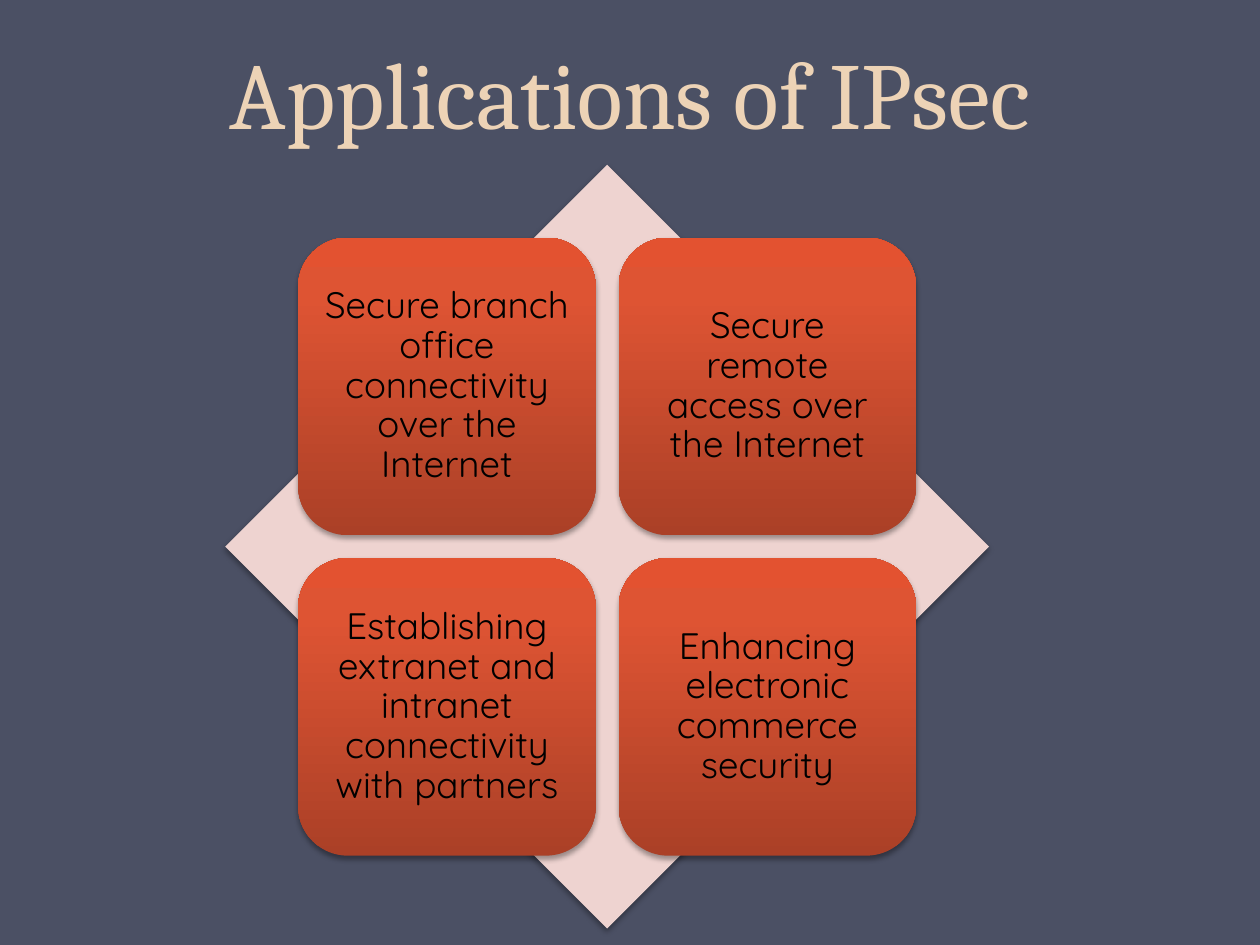
from dataclasses import dataclass

from lxml.etree import SubElement
from pptx import Presentation
from pptx.dml.color import RGBColor
from pptx.enum.shapes import MSO_SHAPE
from pptx.enum.text import MSO_ANCHOR, MSO_AUTO_SIZE, PP_ALIGN
from pptx.oxml.ns import qn
from pptx.util import Cm, Pt


@dataclass(frozen=True)
class Theme:
    background: str = "4B5064"
    title: str = "EDD3B6"
    diamond: str = "EED3D0"
    text: str = "000000"
    shadow: str = "000000"
    card_gradient: tuple = ((0, "AB4027"), (80, "DE5433"), (100, "E35230"))
    title_font: str = "Cambria"
    card_font: str = "Quicksand"
    title_size: int = 54
    card_size: int = 21


theme = Theme()


def style_paragraph(paragraph, font_name, size, color, spacing):
    paragraph.alignment = PP_ALIGN.CENTER
    paragraph.line_spacing = spacing
    paragraph.font.name = font_name
    paragraph.font.size = Pt(size)
    paragraph.font.color.rgb = RGBColor.from_string(color)


def add_soft_shadow(shape):
    """Drop a faint shadow straight down and remove the outline."""
    shape.line.fill.background()
    shape.shadow.inherit = False
    effects = shape._element.spPr.find(qn("a:effectLst"))
    shadow = SubElement(effects, qn("a:outerShdw"), blurRad=str(Pt(3.1)),
                        dist=str(Pt(1.8)), dir="5400000", rotWithShape="0")
    color = SubElement(shadow, qn("a:srgbClr"), val=theme.shadow)
    SubElement(color, qn("a:alpha"), val="35000")


prs = Presentation()
prs.slide_width, prs.slide_height = Cm(25.4), Cm(19.05)
slide = prs.slides.add_slide(prs.slide_layouts[5])
slide.background.fill.solid()
slide.background.fill.fore_color.rgb = RGBColor.from_string(theme.background)

# Title
title = slide.shapes.title
title.left, title.top, title.width, title.height = Cm(1.27), Cm(0), Cm(22.86), Cm(3.12)
title.text_frame.text = "Applications of IPsec"
title.text_frame.auto_size = MSO_AUTO_SIZE.NONE
title.text_frame.vertical_anchor = MSO_ANCHOR.BOTTOM
style_paragraph(title.text_frame.paragraphs[0], theme.title_font,
                theme.title_size, theme.title, Pt(58))

# Diamond behind the cards
center_x, center_y, diamond_size = 12.24, 11.02, 15.4
diamond = slide.shapes.add_shape(
    MSO_SHAPE.DIAMOND, Cm(center_x - diamond_size / 2), Cm(center_y - diamond_size / 2),
    Cm(diamond_size), Cm(diamond_size))
diamond.fill.solid()
diamond.fill.fore_color.rgb = RGBColor.from_string(theme.diamond)
add_soft_shadow(diamond)

# Two by two application cards, centred on the diamond
applications = [
    "Secure branch office connectivity over the Internet",
    "Secure remote access over the Internet",
    "Establishing extranet and intranet connectivity with partners",
    "Enhancing electronic commerce security",
]
card_size, gap = 6, 0.46
card_left = center_x - card_size - gap / 2
card_top = center_y - card_size - gap / 2

for index, application in enumerate(applications):
    row, column = divmod(index, 2)
    card = slide.shapes.add_shape(
        MSO_SHAPE.ROUNDED_RECTANGLE,
        Cm(card_left + column * (card_size + gap)),
        Cm(card_top + row * (card_size + gap)),
        Cm(card_size), Cm(card_size))

    # Gradient from the dark bottom edge upwards
    card.fill.gradient()
    card.fill.gradient_angle = 90
    stops = card._element.spPr.find(qn("a:gradFill")).find(qn("a:gsLst"))
    stops.clear()
    for position, color in theme.card_gradient:
        stop = SubElement(stops, qn("a:gs"), pos=str(position * 1000))
        SubElement(stop, qn("a:srgbClr"), val=color)
    add_soft_shadow(card)

    # Label
    label = card.text_frame
    label.text = application
    label.word_wrap = True
    label.vertical_anchor = MSO_ANCHOR.MIDDLE
    label.margin_left = label.margin_right = Cm(0.23)
    label.margin_top = label.margin_bottom = Cm(0.23)
    style_paragraph(label.paragraphs[0], theme.card_font,
                    theme.card_size, theme.text, 0.9)

prs.save("out.pptx")
